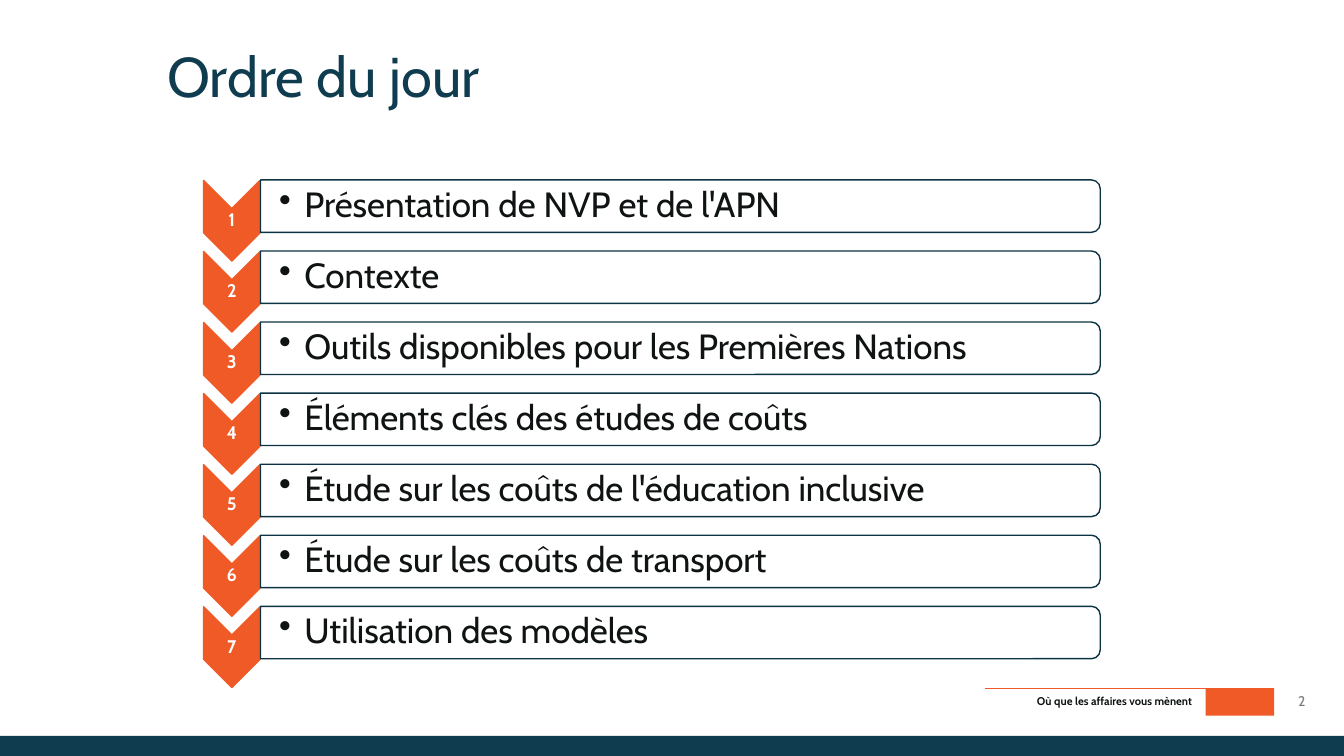
from dataclasses import dataclass

import lxml.etree
import pptx
import pptx.dml.color
import pptx.enum.shapes
import pptx.enum.text
import pptx.oxml.ns
import pptx.util

COLUMNS, ROWS = 80, 45
WIDTH, HEIGHT = pptx.util.Inches(13.333), pptx.util.Inches(7.5)
FONT = "Cabin"
COLORS = {
    "orange": "EF5A27",
    "navy": "0F3C4F",
    "outline": "0C3343",
    "ink": "0F1313",
    "grey": "797979",
    "white": "FFFFFF",
}
TOPICS = [
    "Présentation de NVP et de l'APN",
    "Contexte",
    "Outils disponibles pour les Premières Nations",
    "Éléments clés des études de coûts",
    "Étude sur les coûts de l'éducation inclusive",
    "Étude sur les coûts de transport",
    "Utilisation des modèles",
]
ROW_PITCH = 4.23
PRESETS = pptx.enum.shapes.MSO_SHAPE
ALIGN = pptx.enum.text.PP_ALIGN
ANCHOR = pptx.enum.text.MSO_ANCHOR


@dataclass(frozen=True)
class Box:
    """Place on the slide, in grid columns and rows."""
    column: float
    row: float
    columns: float
    rows: float

    def down(self, rows: float) -> "Box":
        return Box(self.column, self.row + rows, self.columns, self.rows)

    def lengths(self) -> tuple[int, int, int, int]:
        return (across(self.column), along(self.row),
                across(self.columns), along(self.rows))


@dataclass(frozen=True)
class TextStyle:
    size: float
    color: str
    bold: bool = False
    align: ALIGN = ALIGN.LEFT
    anchor: ANCHOR = ANCHOR.TOP
    margins: tuple[float, float, float, float] = (0, 0.05, 0, 0.05)
    line_spacing: float = 1.0
    bullet: bool = False


CHEVRON = Box(12.12, 10.74, 3.36, 4.8)
NUMBER = Box(12.12, 12.42, 3.36, 1.44)
BAR = Box(15.51, 10.71, 49.98, 3.12)
TOPIC = Box(15.48, 10.86, 49.86, 2.82)

TITLE_STYLE = TextStyle(40, "navy", margins=(0, 0, 0, 0), line_spacing=0.9)
NUMBER_STYLE = TextStyle(13, "white", True, ALIGN.CENTER, ANCHOR.MIDDLE,
                         (0.01, 0.01, 0.01, 0.01), 0.9)
TOPIC_STYLE = TextStyle(25, "ink", anchor=ANCHOR.MIDDLE,
                        margins=(0.19, 0.02, 0.02, 0.02),
                        line_spacing=0.9, bullet=True)
SLOGAN_STYLE = TextStyle(8, "ink", True, ALIGN.RIGHT)
PAGE_STYLE = TextStyle(10, "grey", align=ALIGN.CENTER, anchor=ANCHOR.MIDDLE)


def across(columns: float) -> int:
    return round(WIDTH * columns / COLUMNS)


def along(rows: float) -> int:
    return round(HEIGHT * rows / ROWS)


def rgb(name: str) -> pptx.dml.color.RGBColor:
    return pptx.dml.color.RGBColor.from_string(COLORS[name])


def add_bullet(paragraph) -> None:
    paragraph.level = 1
    properties = paragraph._p.get_or_add_pPr()
    properties.set("marL", str(pptx.util.Inches(0.25)))
    properties.set("indent", str(pptx.util.Inches(-0.25)))
    bullet = lxml.etree.SubElement(properties, pptx.oxml.ns.qn("a:buChar"))
    bullet.set("char", "•")


def write(shape, text: str, style: TextStyle) -> None:
    frame = shape.text_frame
    frame.text = text
    frame.word_wrap = True
    frame.auto_size = pptx.enum.text.MSO_AUTO_SIZE.NONE
    frame.vertical_anchor = style.anchor
    (frame.margin_left, frame.margin_top,
     frame.margin_right, frame.margin_bottom) = map(pptx.util.Inches, style.margins)
    paragraph = frame.paragraphs[0]
    paragraph.alignment = style.align
    paragraph.line_spacing = style.line_spacing
    if style.bullet:
        add_bullet(paragraph)
    font = paragraph.runs[0].font
    font.name = FONT
    font.size = pptx.util.Pt(style.size)
    font.bold = style.bold
    font.color.rgb = rgb(style.color)


def add_text(slide, box: Box, text: str, style: TextStyle) -> None:
    write(slide.shapes.add_textbox(*box.lengths()), text, style)


def add_preset(slide, preset: PRESETS, box: Box, fill: str,
               line: str | None = None, turned: bool = False) -> None:
    """Fill the box with a preset shape, turned by a quarter if asked."""
    left, top, width, height = box.lengths()
    if turned:
        left += (width - height) // 2
        top += (height - width) // 2
        width, height = height, width
    shape = slide.shapes.add_shape(preset, left, top, width, height)
    shape.rotation = 90 if turned else 0
    shape.shadow.inherit = False
    shape.fill.solid()
    shape.fill.fore_color.rgb = rgb(fill)
    if line is None:
        shape.line.fill.background()
    else:
        shape.line.color.rgb = rgb(line)
        shape.line.width = pptx.util.Pt(1)


def add_footer(slide) -> None:
    add_preset(slide, PRESETS.RECTANGLE, Box(71.76, 40.98, 4.08, 1.62), "orange")
    rule = slide.shapes.add_connector(
        pptx.enum.shapes.MSO_CONNECTOR.STRAIGHT,
        across(58.62), along(40.98), across(75.84), along(40.98))
    rule.line.color.rgb = rgb("orange")
    rule.line.width = pptx.util.Pt(1)
    lxml.etree.SubElement(rule._element.spPr, pptx.oxml.ns.qn("a:effectLst"))
    add_preset(slide, PRESETS.RECTANGLE, Box(0, 43.8, COLUMNS, 1.2), "navy")
    add_text(slide, Box(58.62, 41.04, 12.36, 1.44),
             "Où que les affaires vous mènent", SLOGAN_STYLE)
    add_text(slide, Box(75.84, 40.92, 3.3, 1.62), "2", PAGE_STYLE)


def add_topic(slide, index: int, topic: str) -> None:
    offset = index * ROW_PITCH
    add_preset(slide, PRESETS.CHEVRON, CHEVRON.down(offset), "orange", "orange", True)
    add_text(slide, NUMBER.down(offset), str(index + 1), NUMBER_STYLE)
    add_preset(slide, PRESETS.ROUND_2_SAME_RECTANGLE, BAR.down(offset),
               "white", "outline", True)
    add_text(slide, TOPIC.down(offset), topic, TOPIC_STYLE)


def main() -> None:
    presentation = pptx.Presentation()
    presentation.slide_width, presentation.slide_height = WIDTH, HEIGHT
    slide = presentation.slides.add_slide(presentation.slide_layouts.get_by_name("Title Only"))
    add_footer(slide)
    title = slide.shapes.title
    title.left, title.top, title.width, title.height = Box(9.96, 2.94, 71.58, 3.66).lengths()
    write(title, "Ordre du jour", TITLE_STYLE)
    for index, topic in enumerate(TOPICS):
        add_topic(slide, index, topic)
    presentation.save("out.pptx")


if __name__ == "__main__":
    main()
